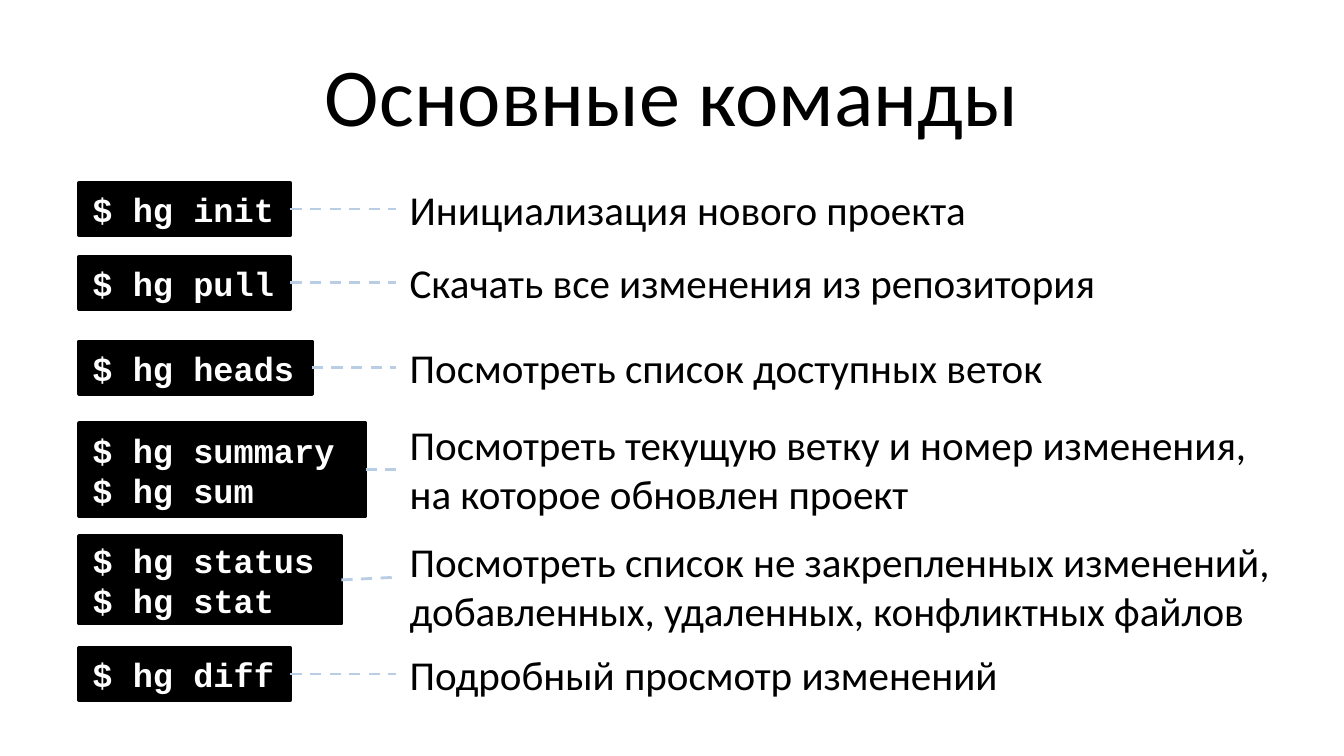
"""Build a slide that lists the basic version control commands."""
from dataclasses import dataclass

from lxml.etree import SubElement
from pptx import Presentation
from pptx.dml.color import RGBColor
from pptx.enum.dml import MSO_LINE
from pptx.enum.shapes import MSO_CONNECTOR, MSO_SHAPE
from pptx.enum.text import MSO_ANCHOR, MSO_AUTO_SIZE, PP_ALIGN
from pptx.oxml.ns import qn
from pptx.slide import Slide
from pptx.text.text import TextFrame
from pptx.util import Inches, Pt

BLACK = "000000"
WHITE = "FFFFFF"
PALE_BLUE = "B9CDE5"
PAGE_WIDTH = 10
PAGE_HEIGHT = PAGE_WIDTH * 9 / 16
COMMAND_LEFT = 0.59
DESCRIPTION_LEFT = 2.95


@dataclass(frozen=True)
class Command:
    """A command box and its description, in inches."""

    code: str
    description: str
    top: float
    width: float
    description_width: float
    height: float = 0.39
    description_height: float = 0.47
    description_rise: float = 0.04
    line_rise: float = 0


COMMANDS = [
    Command("$ hg init", "Инициализация нового проекта", 1.36, 1.57, 4.39),
    Command("$ hg pull", "Скачать все изменения из репозитория", 1.91, 1.57, 5.36),
    Command("$ hg heads", "Посмотреть список доступных веток", 2.54, 1.73, 5.04),
    Command(
        "$ hg summary\n$ hg sum",
        "Посмотреть текущую ветку и номер изменения,\nна которое обновлен проект",
        3.15, 2.13, 6.5, 0.69, 0.84, 0.08,
    ),
    Command(
        "$ hg status\n$ hg stat",
        "Посмотреть список не закрепленных изменений,\n"
        "добавленных, удаленных, конфликтных файлов",
        3.99, 1.95, 6.68, 0.65, 0.84, 0.05, 0.02,
    ),
    Command("$ hg diff", "Подробный просмотр изменений", 4.82, 1.57, 4.63),
]


def color(value: str) -> RGBColor:
    """Turn a hex string into a colour."""
    return RGBColor.from_string(value)


def write(frame: TextFrame, text: str, font: str, size: float, ink: str,
          bold: bool = False, align: PP_ALIGN = PP_ALIGN.LEFT) -> None:
    """Set the text of a frame and format its runs."""
    frame.text = text
    for para in frame.paragraphs:
        para.alignment = align
        for span in para.runs:
            span.font.name = font
            span.font.size = Pt(size)
            span.font.bold = bold
            span.font.color.rgb = color(ink)


def add_title(page: Slide, text: str) -> None:
    """Place and fill the title."""
    title = page.shapes.title
    title.left, title.top = Inches(0.5), Inches(0.23)
    title.width, title.height = Inches(9), Inches(0.94)
    title.text_frame.vertical_anchor = MSO_ANCHOR.MIDDLE
    write(title.text_frame, text, "Calibri", 44, BLACK, align=PP_ALIGN.CENTER)


def add_code(page: Slide, command: Command) -> None:
    """Draw the black box with the command."""
    box = page.shapes.add_shape(
        MSO_SHAPE.RECTANGLE, Inches(COMMAND_LEFT), Inches(command.top),
        Inches(command.width), Inches(command.height),
    )
    box.shadow.inherit = False
    box.fill.solid()
    box.fill.fore_color.rgb = color(BLACK)
    box.line.color.rgb = color(BLACK)
    box.line.width = Pt(2)
    box.text_frame.vertical_anchor = MSO_ANCHOR.MIDDLE
    write(box.text_frame, command.code, "Courier New", 18, WHITE, bold=True)


def add_description(page: Slide, command: Command) -> None:
    """Write the description beside the command."""
    box = page.shapes.add_textbox(
        Inches(DESCRIPTION_LEFT), Inches(command.top - command.description_rise),
        Inches(command.description_width), Inches(command.description_height),
    )
    box.text_frame.word_wrap = False
    box.text_frame.auto_size = MSO_AUTO_SIZE.SHAPE_TO_FIT_TEXT
    write(box.text_frame, command.description, "Calibri", 22, BLACK)


def add_link(page: Slide, command: Command) -> None:
    """Join the command to its description with a dashed line."""
    middle = command.top + command.height / 2
    link = page.shapes.add_connector(
        MSO_CONNECTOR.STRAIGHT,
        Inches(COMMAND_LEFT + command.width), Inches(middle),
        Inches(DESCRIPTION_LEFT), Inches(middle - command.line_rise),
    )
    link.line.color.rgb = color(PALE_BLUE)
    link.line.width = Pt(1.5)
    link.line.dash_style = MSO_LINE.DASH
    SubElement(link._element.spPr, qn("a:effectLst"))


def main() -> None:
    """Build and save the deck."""
    deck = Presentation()
    deck.slide_width, deck.slide_height = Inches(PAGE_WIDTH), Inches(PAGE_HEIGHT)
    page = deck.slides.add_slide(deck.slide_layouts.get_by_name("Title Only"))
    add_title(page, "Основные команды")
    for command in COMMANDS:
        add_code(page, command)
        add_description(page, command)
        add_link(page, command)
    deck.save("out.pptx")


if __name__ == "__main__":
    main()
